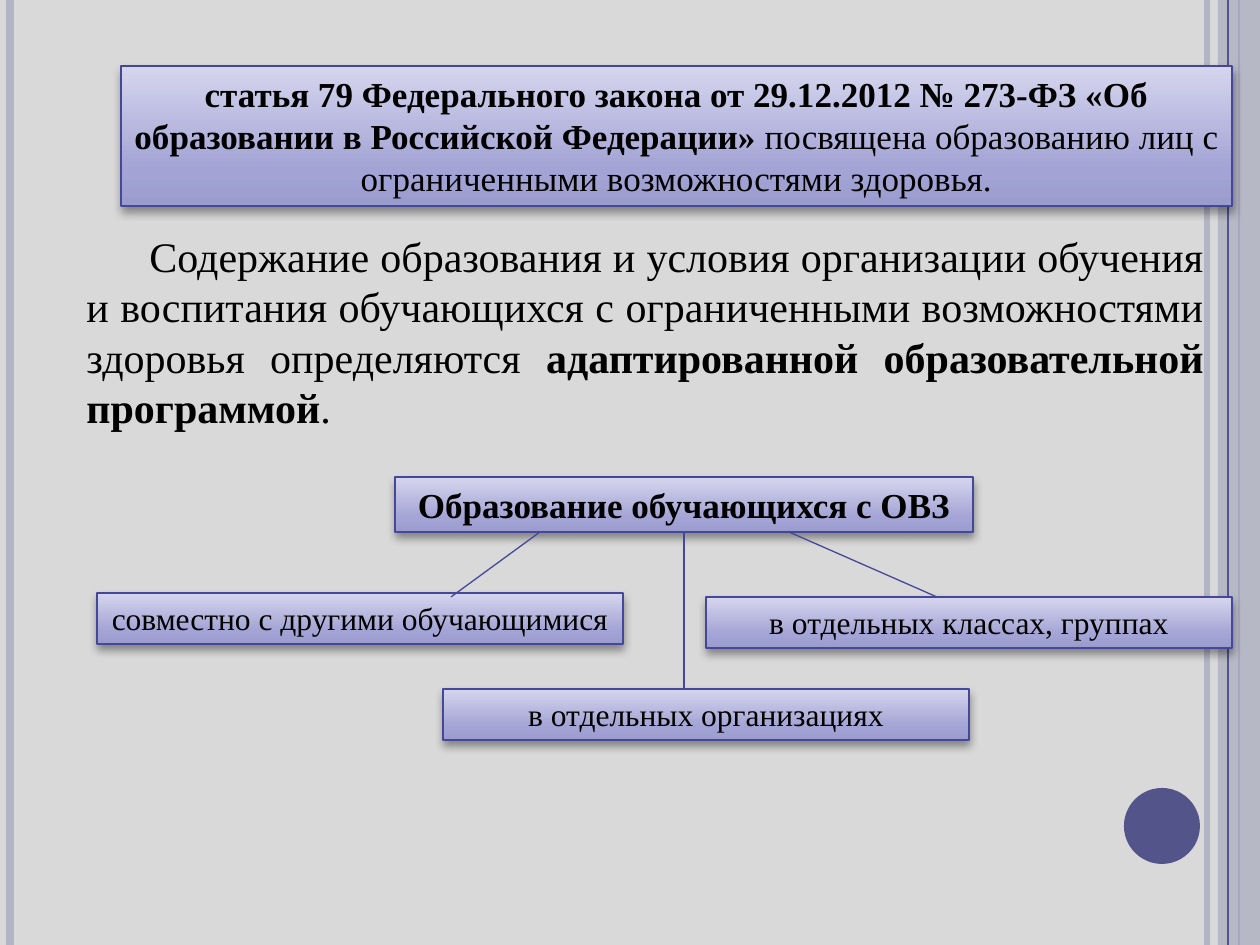
from copy import deepcopy
from lxml.etree import SubElement
from pptx import Presentation
from pptx.dml.color import RGBColor
from pptx.enum.shapes import MSO_CONNECTOR as Connector, MSO_SHAPE as Shape
from pptx.enum.text import MSO_ANCHOR as Anchor, PP_ALIGN as Align
from pptx.oxml.ns import qn
from pptx.util import Pt

PX = 914400 / 126
color = RGBColor.from_string


def scaled(*lengths):
    return [round(length * PX) for length in lengths]


def write(paragraph, runs, size):
    for text, bold in runs:
        run = paragraph.add_run()
        run.text = text
        font_format = {"name": "Times New Roman", "size": Pt(size), "bold": bold}
        for name, value in font_format.items():
            setattr(run.font, name, value)
        run.font.color.rgb = color("000000")


presentation = Presentation()
presentation.slide_width, presentation.slide_height = scaled(1260, 945)
slide = presentation.slides.add_slide(presentation.slide_layouts[6])
slide.background.fill.solid()
slide.background.fill.fore_color.rgb = color("D9D9D9")
shapes = slide.shapes

side_band = (Shape.RECTANGLE, (1218, 0, 42, 945), "B3B4C4", 87)
corner_circle = (Shape.OVAL, (1124, 788, 76, 76), "53548A", 100)
for kind, place, fill_color, opacity in (side_band, corner_circle):
    shape = shapes.add_shape(kind, *scaled(*place))
    shape.shadow.inherit = False
    shape.fill.solid()
    shape.fill.fore_color.rgb = color(fill_color)
    shape.line.fill.background()
    if opacity < 100:
        fill_element = shape._element.spPr.find(".//" + qn("a:srgbClr"))
        SubElement(fill_element, qn("a:alpha"), val=str(opacity * 1000))

body = shapes.add_textbox(*scaled(74, 224, 1142, 208))
body.text_frame.word_wrap = True
paragraph = body.text_frame.paragraphs[0]
for name, value in {"alignment": Align.JUSTIFY, "space_before": Pt(6)}.items():
    setattr(paragraph, name, value)
paragraph._p.get_or_add_pPr().set("indent", str(scaled(63)[0]))
write(paragraph, [
    ("Содержание образования и условия организации обучения и воспитания "
     "обучающихся с ограниченными возможностями здоровья определяются ", False),
    ("адаптированной образовательной программой", True),
    (".", False),
], 24)

boxes = [
    ((121, 66, 1111, 140), 20, [
        ("статья 79\u00a0Федерального закона от 29.12.2012 № 273-ФЗ "
         "«Об образовании в Российской Федерации» ", True),
        ("посвящена образованию лиц с ограниченными возможностями здоровья.", False)]),
    ((395, 477, 578, 55), 20, [("Образование обучающихся с ОВЗ", True)]),
    ((97, 593, 526, 51), 18, [("совместно с другими обучающимися", False)]),
    ((706, 597, 526, 51), 18, [("в отдельных классах, группах", False)]),
    ((443, 689, 526, 51), 18, [("в отдельных организациях", False)]),
]
gradient = [(0, "9B9CCE"), (0.25, "A3A3D5"), (1, "D5D5EE")]
shadow = {"blurRad": Pt(5.2), "dist": Pt(3), "dir": 5400000, "rotWithShape": 0}
for place, size, runs in boxes:
    box = shapes.add_shape(Shape.RECTANGLE, *scaled(*place))
    box.fill.gradient()
    box.fill.gradient_angle = 90
    stop_list = box._element.spPr.find(".//" + qn("a:gsLst"))
    stop_list.append(deepcopy(stop_list[0]))
    for stop, (position, stop_color) in zip(box.fill.gradient_stops, gradient):
        stop.position = position
        stop.color.rgb = color(stop_color)
    box.line.color.rgb = color("454798")
    box.line.width = Pt(0.75)
    box.shadow.inherit = False
    effects = box._element.spPr.find(qn("a:effectLst"))
    outer = SubElement(effects, qn("a:outerShdw"),
                       {name: str(value) for name, value in shadow.items()})
    shadow_color = SubElement(outer, qn("a:srgbClr"), val="000000")
    SubElement(shadow_color, qn("a:alpha"), val="40000")
    frame = box.text_frame
    for name, value in {"word_wrap": True, "vertical_anchor": Anchor.TOP}.items():
        setattr(frame, name, value)
    frame.paragraphs[0].alignment = Align.CENTER
    write(frame.paragraphs[0], runs, size)

lines = [
    ((1207, 0, 1207, 945), "B3B4C4", 3),
    ((10, 0, 10, 945), "B3B4C4", 4.5),
    ((1239, 0, 1239, 945), "53548A", 1.5),
    ((1228, 0, 1228, 945), "53548A", 0.75),
    ((540, 532, 451, 597), "454798", 0.75),
    ((684, 532, 684, 689), "454798", 0.75),
    ((789, 532, 937, 597), "454798", 0.75),
]
decoration_count = 4
for index, (ends, line_color, width) in enumerate(lines):
    line = shapes.add_connector(Connector.STRAIGHT, *scaled(*ends))
    line.line.color.rgb = color(line_color)
    line.line.width = Pt(width)
    SubElement(line._element.spPr, qn("a:effectLst"))
    if index < decoration_count:
        behind_band = index if index < 3 else index + 1
        shapes._spTree.insert(2 + behind_band, line._element)

presentation.save("out.pptx")
